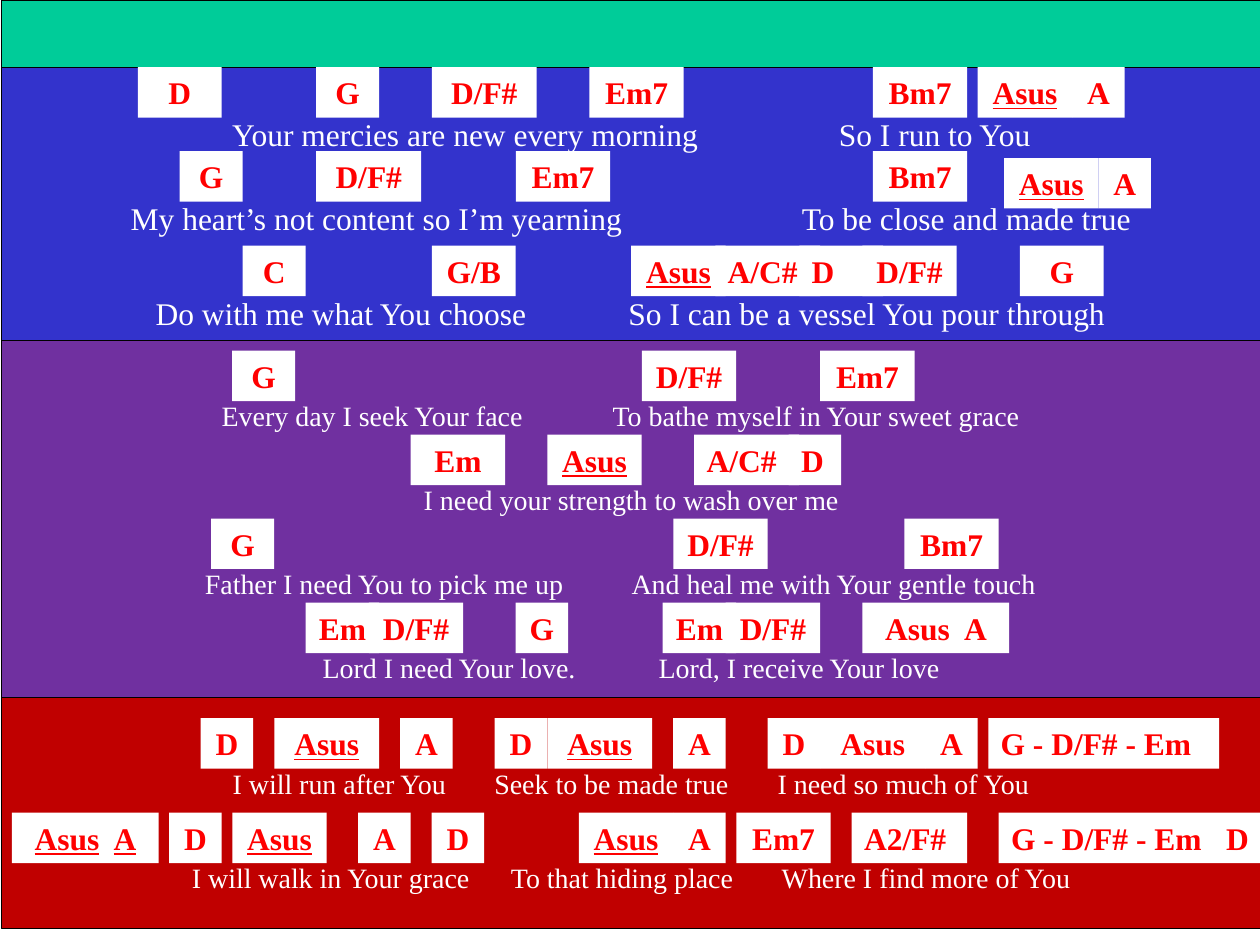
from dataclasses import dataclass

import pptx
import pptx.dml.color
import pptx.enum.shapes
import pptx.enum.text
import pptx.oxml
import pptx.oxml.ns
import pptx.util
from pptx.util import Pt


@dataclass(frozen=True)
class Theme:
    font: str = "Times New Roman"
    header: str = "00CC99"
    verse: str = "3333CC"
    chorus: str = "7030A0"
    bridge: str = "C00000"
    border: str = "000000"
    lyric: str = "FFFFFF"
    chord: str = "FF0000"
    chord_fill: str = "FFFFFF"
    chord_size: float = 18
    verse_size: float = 18
    refrain_size: float = 16


@dataclass(frozen=True)
class Chord:
    name: str
    left: float
    width: float
    underline: bool = False
    stops: tuple = ()
    drop: float = 0


@dataclass(frozen=True)
class Row:
    top: float
    lyric: str
    stops: tuple
    chords: tuple


THEME = Theme()
SLIDE_WIDTH, SLIDE_HEIGHT = 720, 540
BAND_LEFT = 0.72
CHORD_HEIGHT = 28.8
LYRIC_DROP = 24
INSET = (7.2,)
PAIR = (13.1, 58.2)

VERSE = (
    Row(0, "Your mercies are new every morning\tSo I run to You", (131.9, 478.7), (
        Chord("D", 78, 48), Chord("G", 180, 36), Chord("D/F#", 246, 60),
        Chord("Em7", 336, 54), Chord("Bm7", 498, 54),
        Chord("Asus", 558, 54, True), Chord("A", 612, 30))),
    Row(48, "My heart’s not content so I’m yearning\tTo be close and made true", (74, 457.5), (
        Chord("G", 102, 36), Chord("D/F#", 180, 60), Chord("Em7", 294, 54),
        Chord("Bm7", 498, 54), Chord("Asus", 573, 54, True, drop=4),
        Chord("A", 627, 30, drop=4))),
    Row(102, "Do with me what You choose\tSo I can be a vessel You pour through", (88.2, 358.4), (
        Chord("C", 138, 36), Chord("G/B", 246, 48), Chord("Asus", 360, 54, True),
        Chord("A/C#", 408, 60, stops=INSET), Chord("D", 456, 48, stops=INSET),
        Chord("D/F#", 492, 54), Chord("G", 582, 48))),
)

CHORUS = (
    Row(6, "Every day I seek Your face\tTo bathe myself in Your sweet grace", (126, 349.4), (
        Chord("G", 132, 36), Chord("D/F#", 366, 54), Chord("Em7", 468, 54))),
    Row(54, "I need your strength to wash over me", (), (
        Chord("Em", 234, 54), Chord("Asus", 312, 54, True),
        Chord("A/C#", 396, 60, stops=INSET), Chord("D", 450, 30, stops=INSET))),
    Row(102, "Father I need You to pick me up\tAnd heal me with Your gentle touch", (116.4, 360.2), (
        Chord("G", 120, 36), Chord("D/F#", 384, 54), Chord("Bm7", 516, 54))),
    Row(150, "Lord I need Your love.\tLord, I receive Your love", (183.7, 375.7), (
        Chord("Em", 174, 42), Chord("D/F#", 210, 54), Chord("G", 294, 30),
        Chord("Em", 378, 42), Chord("D/F#", 414, 54),
        Chord("Asus\tA", 492, 84, stops=PAIR))),
)

BRIDGE = (
    Row(12, "I will run after You\tSeek to be made true\tI need so much of You", (132.3, 281.8, 443.7), (
        Chord("D", 114, 30), Chord("Asus", 156, 60, True), Chord("A", 228, 30),
        Chord("D", 282, 30), Chord("Asus", 312, 60, True), Chord("A", 384, 30),
        Chord("D", 438, 30), Chord("Asus", 468, 60), Chord("A", 528, 30),
        Chord("G - D/F# - Em", 564, 132, stops=INSET))),
    Row(66, "I will walk in Your grace\tTo that hiding place\tWhere I find more of You", (109, 291.3, 446), (
        Chord("Asus\tA", 6, 84, True, PAIR), Chord("D", 96, 30),
        Chord("Asus", 132, 54, True), Chord("A", 204, 30), Chord("D", 246, 30),
        Chord("Asus", 330, 54, True), Chord("A", 384, 30), Chord("Em7", 420, 54),
        Chord("A2/F#", 486, 66, stops=INSET),
        Chord("G - D/F# - Em\tD", 570, 150, stops=(7.2, 130)))),
)


def rgb(color):
    return pptx.dml.color.RGBColor.from_string(color)


def write_text(shape, text, *, size, color, bold=False, underline=False, stops=()):
    frame = shape.text_frame
    frame.word_wrap = True
    frame.vertical_anchor = pptx.enum.text.MSO_ANCHOR.TOP
    frame.margin_left = Pt(stops[0] if stops else 0)
    frame.margin_right = 0
    paragraph = frame.paragraphs[0]
    alignment = pptx.enum.text.PP_ALIGN
    paragraph.alignment = alignment.LEFT if stops else alignment.CENTER
    if len(stops) > 1:
        properties = paragraph._p.get_or_add_pPr()
        tab_list = pptx.oxml.xmlchemy.OxmlElement("a:tabLst")
        for stop in stops[1:]:
            tab = pptx.oxml.xmlchemy.OxmlElement("a:tab")
            tab.set("pos", str(int(Pt(stop - stops[0]))))
            tab.set("algn", "l")
            tab_list.append(tab)
        properties.append(tab_list)
    run = paragraph.add_run()
    run.text = text
    run.font.name = THEME.font
    run.font.size = Pt(size)
    run.font.color.rgb = rgb(color)
    run.font.bold = bold
    run.font.underline = underline


def add_rectangle(slide, left, top, width, height, fill, border=None):
    shape = slide.shapes.add_shape(
        pptx.enum.shapes.MSO_SHAPE.RECTANGLE, Pt(left), Pt(top), Pt(width), Pt(height))
    shape.shadow.inherit = False
    shape.fill.solid()
    shape.fill.fore_color.rgb = rgb(fill)
    if border:
        shape.line.color.rgb = rgb(border)
        shape.line.width = Pt(0.75)
    else:
        shape.line.fill.background()
    return shape


def add_section(slide, left, top, width, height, *, fill, rows, lyric_size):
    add_rectangle(slide, left, top, width, height, fill, THEME.border)
    for row in rows:
        lyric = slide.shapes.add_textbox(
            Pt(left), Pt(top + row.top + LYRIC_DROP), Pt(width), Pt(lyric_size * 1.2 + 7.2))
        write_text(lyric, row.lyric, size=lyric_size, color=THEME.lyric, stops=row.stops)
    for row in rows:
        for chord in row.chords:
            box = add_rectangle(slide, left + chord.left, top + row.top + chord.drop,
                                chord.width, CHORD_HEIGHT, THEME.chord_fill)
            write_text(box, chord.name, size=THEME.chord_size, color=THEME.chord,
                       bold=True, underline=chord.underline, stops=chord.stops)


def main():
    presentation = pptx.Presentation()
    presentation.slide_width = Pt(SLIDE_WIDTH)
    presentation.slide_height = Pt(SLIDE_HEIGHT)
    slide = presentation.slides.add_slide(presentation.slide_layouts[6])
    top = 38.4
    sections = (
        (156, THEME.verse, VERSE, THEME.verse_size),
        (204, THEME.chorus, CHORUS, THEME.refrain_size),
        (132, THEME.bridge, BRIDGE, THEME.refrain_size),
    )
    add_rectangle(slide, BAND_LEFT, 0, SLIDE_WIDTH, top, THEME.header, THEME.border)
    for height, fill, rows, lyric_size in sections:
        add_section(slide, BAND_LEFT, top, SLIDE_WIDTH, height,
                    fill=fill, rows=rows, lyric_size=lyric_size)
        top += height
    presentation.save("out.pptx")


if __name__ == "__main__":
    main()
